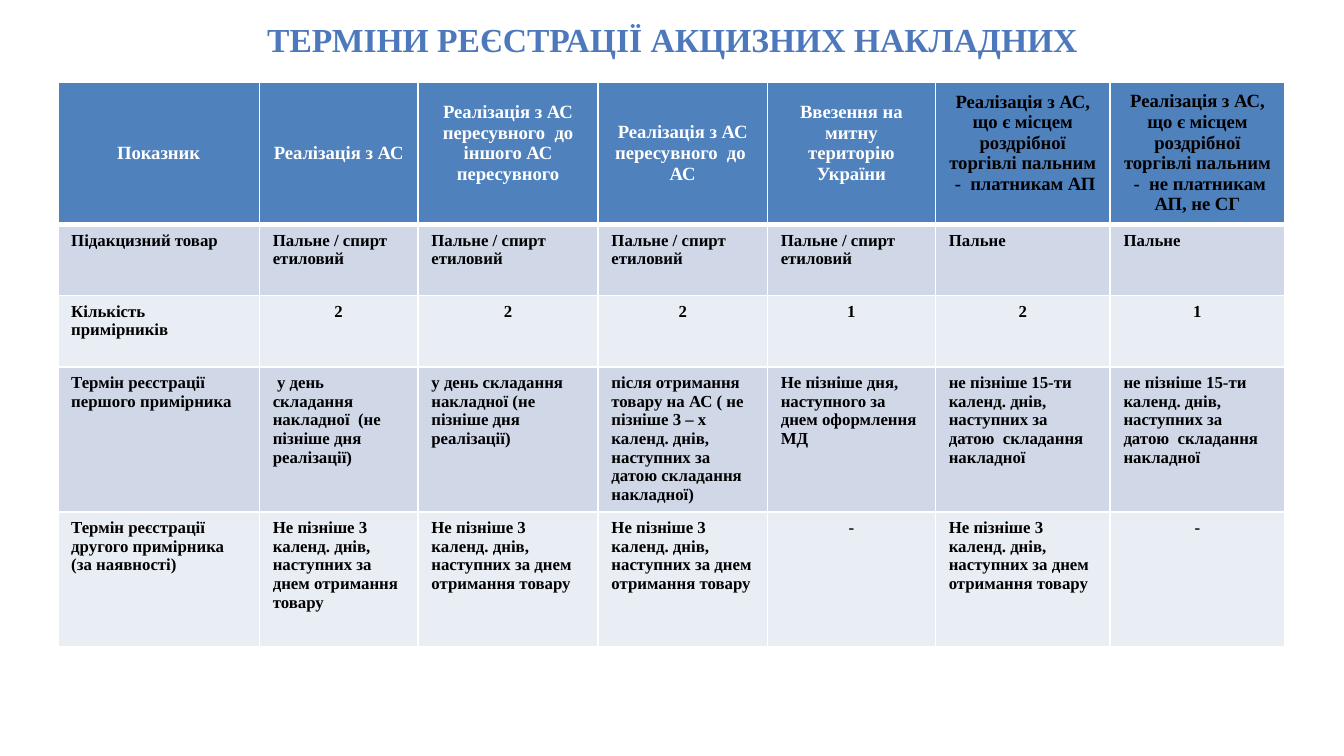
from lxml import etree
from pptx import Presentation
from pptx.dml.color import RGBColor
from pptx.enum.text import MSO_ANCHOR, MSO_AUTO_SIZE, PP_ALIGN
from pptx.oxml.ns import qn
from pptx.util import Inches, Pt

MIDDLE, TOP = MSO_ANCHOR.MIDDLE, MSO_ANCHOR.TOP
CENTER, LEFT = PP_ALIGN.CENTER, PP_ALIGN.LEFT
NONE = MSO_AUTO_SIZE.NONE

WHITE = RGBColor(0xFF, 0xFF, 0xFF)
BLACK = RGBColor(0x00, 0x00, 0x00)
TITLE = RGBColor(0x4D, 0x79, 0xBC)
HEAD = RGBColor(0x4F, 0x81, 0xBD)
BANDS = (RGBColor(0xD0, 0xD8, 0xE8), RGBColor(0xE9, 0xED, 0xF4))

FONT = "Times New Roman"
WIDE = 10
WIDTHS = (1.5, 1.18, 1.34, 1.26, 1.25, 1.3, 1.3)
HEIGHTS = (1.06, 0.53, 0.53, 1.08, 1.0)
DARK = (5, 6)
RAISED = (2, 4, 5)

GOODS = "Пальне / спирт етиловий"
FUEL = "Пальне"
SECOND = "Не пізніше 3 календ. днів, наступних за днем отримання товару"
FIRST = "не пізніше 15-ти календ. днів, наступних за датою  складання накладної"
RETAIL = "Реалізація з АС, що є місцем роздрібної торгівлі пальним  -  "

ROWS = (
    ("Показник",
     "Реалізація з АС",
     "Реалізація з АС пересувного  до іншого АС пересувного",
     "Реалізація з АС пересувного  до  АС",
     "Ввезення на митну територію України",
     RETAIL + "платникам АП",
     RETAIL + "не платникам АП, не СГ"),
    ("Підакцизний товар", GOODS, GOODS, GOODS, GOODS, FUEL, FUEL),
    ("Кількість примірників", "2", "2", "2", "1", "2", "1"),
    ("Термін реєстрації першого примірника",
     " у день складання накладної  (не пізніше дня реалізації)",
     "у день складання накладної (не пізніше дня реалізації)",
     "після отримання  товару на АС ( не пізніше 3 – х календ. днів, "
     "наступних за датою складання накладної)",
     "Не пізніше дня, наступного за днем оформлення МД",
     FIRST, FIRST),
    ("Термін реєстрації другого примірника\n(за наявності)",
     SECOND, SECOND, SECOND, "-", SECOND, "-"),
)


def style(frame, size, color, align):
    looks = {"name": FONT, "size": Pt(size), "bold": True}
    for para in frame.paragraphs:
        para.alignment = align
        for run in para.runs:
            for key, value in looks.items():
                setattr(run.font, key, value)
            run.font.color.rgb = color


def edge(cell, sides):
    props = cell._tc.get_or_add_tcPr()
    for spot, (side, width) in enumerate(sides.items()):
        line = etree.Element(qn("a:ln" + side), w=str(Pt(width)))
        fill = etree.SubElement(line, qn("a:solidFill"))
        etree.SubElement(fill, qn("a:srgbClr"), val=str(WHITE))
        props.insert(spot, line)


def add_title(slide, left, top, width, height):
    title = slide.shapes.title
    box = {"left": left, "top": top, "width": width, "height": height}
    for key, value in box.items():
        setattr(title, key, Inches(value))
    frame = title.text_frame
    frame.text = "ТЕРМІНИ РЕЄСТРАЦІЇ АКЦИЗНИХ НАКЛАДНИХ"
    form = {"word_wrap": True, "auto_size": NONE, "vertical_anchor": MIDDLE}
    for key, value in form.items():
        setattr(frame, key, value)
    style(frame, 18, TITLE, CENTER)


def fill_cell(cell, text, row, col):
    head = row == 0
    cell.text = text
    cell.vertical_anchor = MIDDLE if head else TOP
    if head and col in RAISED:
        cell.margin_bottom = Inches(0.2)
    cell.fill.solid()
    cell.fill.fore_color.rgb = HEAD if head else BANDS[(row - 1) % 2]
    edge(cell, {"L": 1, "R": 1, "T": 3 if row == 1 else 1, "B": 3 if head else 1})
    color = WHITE if head and col not in DARK else BLACK
    align = CENTER if head or len(text) == 1 else LEFT
    style(cell.text_frame, 10 if head else 9, color, align)


def add_terms(slide, left, top):
    box = [Inches(v) for v in (left, top, sum(WIDTHS), sum(HEIGHTS))]
    table = slide.shapes.add_table(len(ROWS), len(WIDTHS), *box).table
    for col, width in zip(table.columns, WIDTHS):
        col.width = Inches(width)
    for row, height in zip(table.rows, HEIGHTS):
        row.height = Inches(height)
    for row, texts in enumerate(ROWS):
        for col, text in enumerate(texts):
            fill_cell(table.cell(row, col), text, row, col)


def main():
    deck = Presentation()
    deck.slide_width, deck.slide_height = Inches(WIDE), Inches(WIDE * 9 / 16)
    slide = deck.slides.add_slide(deck.slide_layouts[5])
    add_title(slide, 0.51, 0.06, 8.99, 0.46)
    add_terms(slide, 0.43, 0.61)
    deck.save("out.pptx")


if __name__ == "__main__":
    main()
